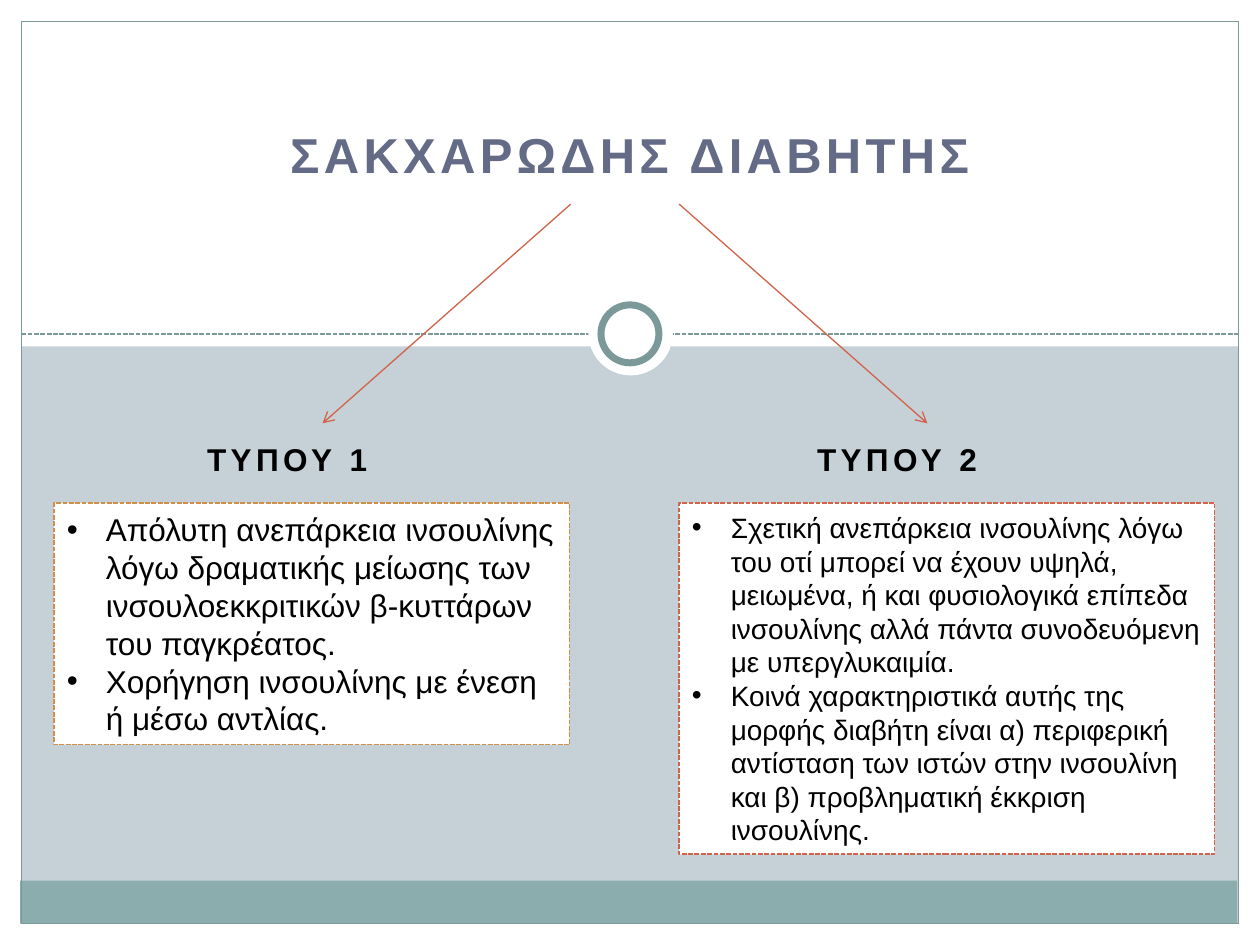
from lxml.etree import SubElement
from pptx import Presentation
from pptx.dml.color import RGBColor
from pptx.enum.dml import MSO_LINE
from pptx.enum.shapes import MSO_CONNECTOR, MSO_SHAPE
from pptx.enum.text import MSO_ANCHOR, MSO_AUTO_SIZE, PP_ALIGN
from pptx.oxml.ns import qn
from pptx.util import Inches, Pt

WHITE = RGBColor(0xFF, 0xFF, 0xFF)
BLACK = RGBColor(0, 0, 0)
MIST = RGBColor(0xC5, 0xD1, 0xD7)
TEAL = RGBColor(0x8C, 0xAD, 0xAE)
SLATE = RGBColor(0x7C, 0x99, 0x9A)
INDIGO = RGBColor(0x64, 0x6B, 0x86)
RED = RGBColor(0xD1, 0x63, 0x49)
AMBER = RGBColor(0xD1, 0x90, 0x49)

TYPE1 = [
    "Απόλυτη ανεπάρκεια ινσουλίνης λόγω δραματικής μείωσης των "
    "ινσουλοεκκριτικών β-κυττάρων του παγκρέατος.",
    "Χορήγηση ινσουλίνης με ένεση ή μέσω αντλίας.",
]
TYPE2 = [
    "Σχετική ανεπάρκεια ινσουλίνης λόγω του οτί μπορεί να έχουν υψηλά, "
    "μειωμένα, ή και φυσιολογικά επίπεδα ινσουλίνης αλλά πάντα "
    "συνοδευόμενη με υπεργλυκαιμία.",
    "Κοινά χαρακτηριστικά αυτής της μορφής διαβήτη είναι α) περιφερική "
    "αντίσταση των ιστών στην ινσουλίνη και β) προβληματική έκκριση "
    "ινσουλίνης.",
]


def add_panel(slide, kind, box, fill=None, line=None, width=0.75):
    panel = slide.shapes.add_shape(kind, *map(Inches, box))
    panel.shadow.inherit = False
    if fill is None:
        panel.fill.background()
    else:
        panel.fill.solid()
        panel.fill.fore_color.rgb = fill
    if line is None:
        panel.line.fill.background()
    else:
        panel.line.color.rgb = line
        panel.line.width = Pt(width)


def add_line(slide, start, end, color, width=0.75, dash=None, arrow=False):
    line = slide.shapes.add_connector(
        MSO_CONNECTOR.STRAIGHT, *map(Inches, start + end))
    line.line.color.rgb = color
    line.line.width = Pt(width)
    if dash:
        line.line.dash_style = dash
    if arrow:
        SubElement(line.line._get_or_add_ln(), qn("a:tailEnd"), type="arrow")
    SubElement(line._element.spPr, qn("a:effectLst"))


def put_text(slide, holder, box, texts, size, color=BLACK, bold=False,
             track=0, align=PP_ALIGN.CENTER, bullet=False):
    holder.left, holder.top, holder.width, holder.height = map(Inches, box)
    slide.shapes._spTree.append(holder._element)  # in front of the panels
    frame = holder.text_frame
    frame.word_wrap = True
    frame.auto_size = MSO_AUTO_SIZE.NONE
    frame.vertical_anchor = MSO_ANCHOR.MIDDLE
    for i, text in enumerate(texts):
        para = frame.add_paragraph() if i else frame.paragraphs[0]
        para.alignment = align
        para.space_before = Pt(0)
        para.line_spacing = 1.0
        if bullet:
            props = para._p.get_or_add_pPr()
            props.set("marL", str(Inches(0.31)))
            props.set("indent", str(-Inches(0.31)))
            SubElement(props, qn("a:buFont"), typeface="Arial")
            SubElement(props, qn("a:buChar"), char="•")
        run = para.add_run()
        run.text = text
        run.font.name = "Arial"
        run.font.size = Pt(size)
        run.font.bold = bold
        run.font.color.rgb = color
        if track:
            run._r.get_or_add_rPr().set("spc", str(int(track * 100)))


def add_list(slide, holder, box, items, size, edge):
    put_text(slide, holder, box, items, size, align=PP_ALIGN.LEFT,
             bullet=True)
    holder.fill.solid()
    holder.fill.fore_color.rgb = WHITE
    holder.line.color.rgb = edge
    holder.line.width = Pt(0.9)
    holder.line.dash_style = MSO_LINE.SQUARE_DOT


def add_frame(slide):
    slide.background.fill.solid()
    slide.background.fill.fore_color.rgb = MIST
    rect, oval = MSO_SHAPE.RECTANGLE, MSO_SHAPE.OVAL
    # White margins and header
    for box in [(0, 7.33, 10, 0.17), (9.83, 0, 0.17, 7.5),
                (0, 0, 0.17, 7.5), (0, 0, 10, 2.75)]:
        add_panel(slide, rect, box, WHITE)
    # Footer band, divider and border
    add_panel(slide, rect, (0.16, 6.99, 9.66, 0.34), TEAL)
    add_line(slide, (0.17, 2.65), (9.83, 2.65), SLATE, 0.9,
             MSO_LINE.SQUARE_DOT)
    add_panel(slide, rect, (0.17, 0.17, 9.66, 7.16), line=SLATE)
    # Ring on the divider
    add_panel(slide, oval, (4.67, 2.31, 0.67, 0.67), WHITE)
    add_panel(slide, oval, (4.77, 2.42, 0.46, 0.46), WHITE, SLATE, 4)


def main():
    deck = Presentation()
    deck.slide_width, deck.slide_height = Inches(10), Inches(7.5)
    slide = deck.slides.add_slide(deck.slide_layouts[4])  # comparison
    title, head1, list1, head2, list2 = slide.placeholders
    add_frame(slide)

    # Title and headings
    put_text(slide, title, (0.2, 0.87, 9.6, 0.7), ["ΣΑΚΧΑΡΩΔΗΣ ΔΙΑΒΗΤΗΣ"],
             28, INDIGO, bold=True, track=2.5)
    for head, left, text in [(head1, 1.28, "ΤΥΠΟΥ 1"),
                             (head2, 6.12, "ΤΥΠΟΥ 2")]:
        put_text(slide, head, (left, 3.44, 2, 0.4), [text], 18,
                 bold=True, track=2.5)

    # Arrows from the title to each type
    for start, end in [(4.53, 2.56), (5.39, 7.36)]:
        add_line(slide, (start, 1.62), (end, 3.36), RED, arrow=True)

    # Descriptions
    add_list(slide, list1, (0.43, 3.99, 4.09, 1.92), TYPE1, 18, AMBER)
    add_list(slide, list2, (5.39, 3.99, 4.25, 2.79), TYPE2, 16, RED)

    deck.save("out.pptx")


if __name__ == "__main__":
    main()
